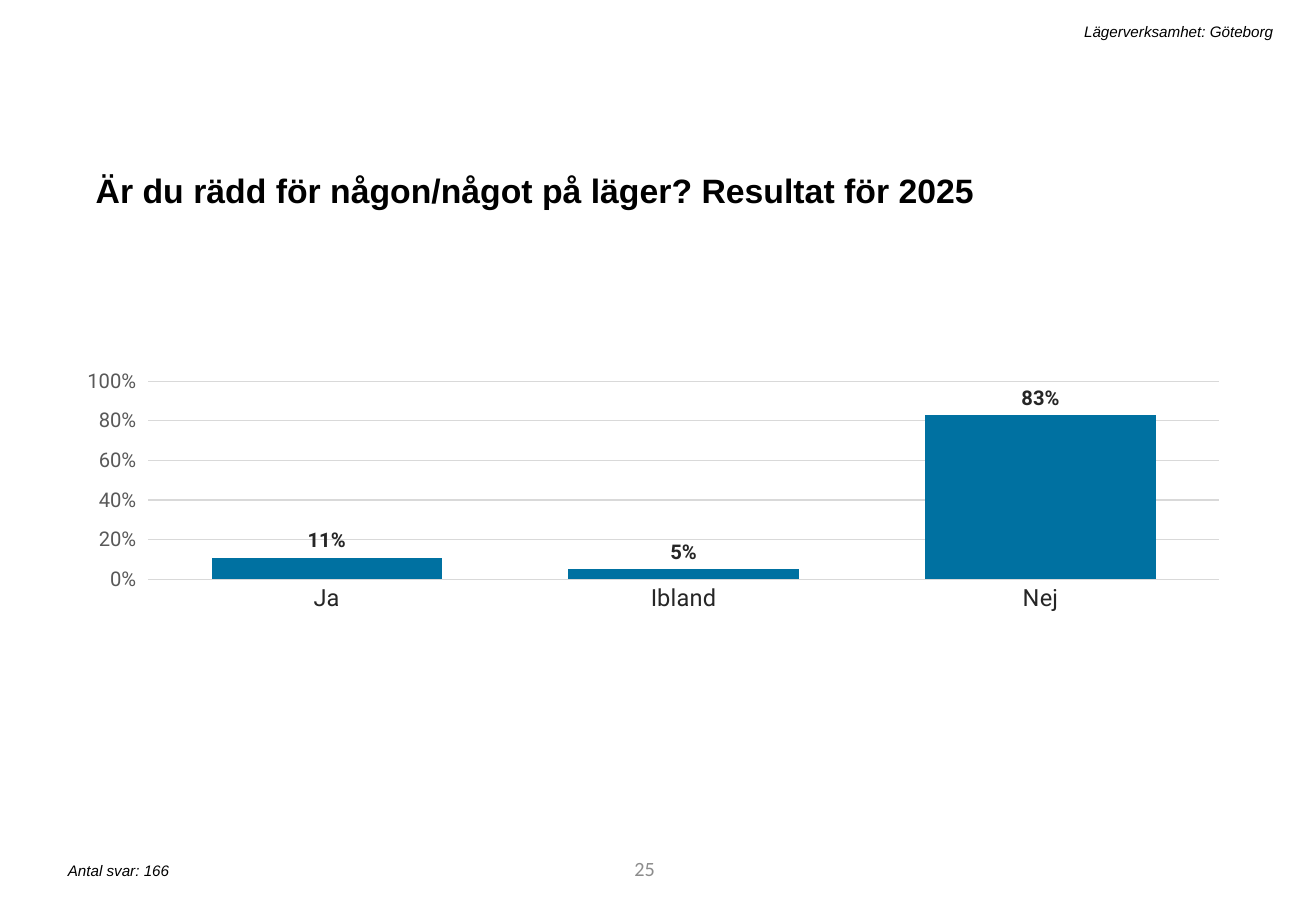
import pptx
import pptx.chart.data
import pptx.dml.color
import pptx.enum.chart
import pptx.enum.text
import pptx.oxml
import pptx.oxml.ns
import pptx.util

Pt = pptx.util.Pt
RGBColor = pptx.dml.color.RGBColor
ALIGN = pptx.enum.text.PP_ALIGN
ANCHOR = pptx.enum.text.MSO_ANCHOR

BLACK = RGBColor(0x00, 0x00, 0x00)
DARK = RGBColor(0x26, 0x26, 0x26)
GREY = RGBColor(0x59, 0x59, 0x59)
PALE_GREY = RGBColor(0x8C, 0x8C, 0x8C)
GRID = RGBColor(0xD9, 0xD9, 0xD9)
BLUE = RGBColor(0x00, 0x71, 0xA1)


class SurveyPage:
    text_font = "Arial"
    number_font = "Calibri"
    chart_font = "Roboto"

    def __init__(self, deck):
        self.page = deck.slides.add_slide(deck.slide_layouts[6])

    def style(self, font, name, size, color, bold=False, italic=False):
        font.name, font.size = name, Pt(size)
        font.bold, font.italic = bold, italic
        font.color.rgb = color

    def text(self, words, left, top, width, height, size, name=text_font,
             color=BLACK, bold=False, italic=False, align=ALIGN.LEFT,
             anchor=ANCHOR.TOP):
        box = self.page.shapes.add_textbox(
            Pt(left), Pt(top), Pt(width), Pt(height))
        frame = box.text_frame
        frame.word_wrap = True
        frame.vertical_anchor = anchor
        para = frame.paragraphs[0]
        para.text = words
        para.alignment = align
        self.style(para.font, name, size, color, bold, italic)
        return para

    def column_chart(self, answers, left, top, width, height, plot_area):
        data = pptx.chart.data.CategoryChartData(number_format="0%")
        data.categories = list(answers)
        data.add_series("Andel", list(answers.values()))
        chart = self.page.shapes.add_chart(
            pptx.enum.chart.XL_CHART_TYPE.COLUMN_CLUSTERED,
            Pt(left), Pt(top), Pt(width), Pt(height), data).chart
        chart.has_legend = chart.has_title = False
        self.style(chart.font, self.chart_font, 10, BLACK)

        # Columns and their labels
        plot = chart.plots[0]
        plot.gap_width = 55
        plot.vary_by_categories = False
        fill = plot.series[0].format.fill
        fill.solid()
        fill.fore_color.rgb = BLUE
        labels = plot.series[0].data_labels
        labels.show_value = True
        labels.number_format, labels.number_format_is_linked = "0%", False
        labels.position = pptx.enum.chart.XL_LABEL_POSITION.OUTSIDE_END
        self.style(labels.font, self.chart_font, 12, DARK, bold=True)

        # Axes
        tick_mark = pptx.enum.chart.XL_TICK_MARK
        category = chart.category_axis
        category.major_tick_mark = tick_mark.NONE
        self.style(category.tick_labels.font, self.chart_font, 14, DARK)
        value = chart.value_axis
        value.minimum_scale, value.maximum_scale = 0, 1
        value.major_unit = 0.2
        value.major_tick_mark = tick_mark.OUTSIDE
        value.format.line.fill.background()
        value.tick_labels.number_format = "0%"
        value.tick_labels.number_format_is_linked = False
        self.style(value.tick_labels.font, self.chart_font, 12, GREY)
        for line in (category.format.line, value.major_gridlines.format.line):
            line.color.rgb = GRID
            line.width = Pt(0.75)

        # Fixed inner plot area, as fractions of the chart
        settings = {"layoutTarget": "inner", "xMode": "edge", "yMode": "edge",
                    **dict(zip("xywh", plot_area))}
        parts = "".join(f'<c:{key} val="{setting}"/>'
                        for key, setting in settings.items())
        layout = pptx.oxml.parse_xml(
            f'<c:layout {pptx.oxml.ns.nsdecls("c")}>'
            f'<c:manualLayout>{parts}</c:manualLayout></c:layout>')
        area = chart.element.find(".//" + pptx.oxml.ns.qn("c:plotArea"))
        for previous in area.findall(pptx.oxml.ns.qn("c:layout")):
            area.remove(previous)
        area.insert(0, layout)


def main():
    deck = pptx.Presentation()
    deck.slide_width, deck.slide_height = Pt(780), Pt(540)
    survey = SurveyPage(deck)

    # Page number
    survey.text("25", 219.6, 500.4, 175.7, 28.8, 12, SurveyPage.number_font,
                PALE_GREY, align=ALIGN.RIGHT, anchor=ANCHOR.MIDDLE)

    # Question
    question = survey.text(
        "Är du rädd för någon/något på läger? Resultat för 2025",
        49.7, 92.2, 676.8, 33.8, 20, bold=True)
    question.line_spacing = 1.2
    question.space_before = Pt(10)

    # Number of answers
    survey.text("Antal svar: 166", 33.1, 506.9, 317.5, 18, 9, italic=True)

    # Share of each answer
    survey.column_chart({"Ja": 0.11, "Ibland": 0.05, "Nej": 0.83},
                        51.8, 182.2, 676.8, 284.4,
                        plot_area=(0.052, 0.154, 0.939, 0.413))

    # Activity and place
    survey.text("Lägerverksamhet: Göteborg", 123.8, 9.4, 637.9, 18, 9,
                italic=True, align=ALIGN.RIGHT)

    deck.save("out.pptx")


if __name__ == "__main__":
    main()
